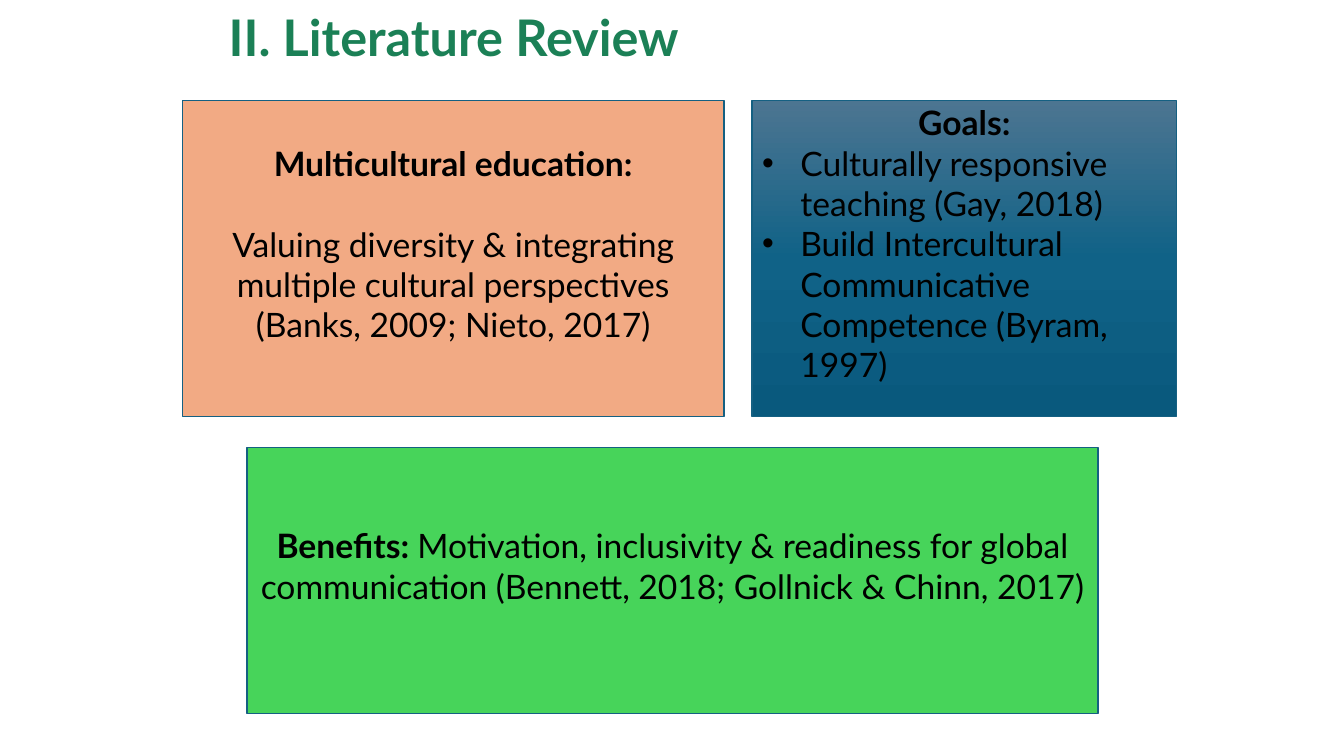
from copy import deepcopy
from lxml import etree
from pptx import Presentation
from pptx.dml.color import RGBColor
from pptx.enum.shapes import MSO_SHAPE
from pptx.enum.text import MSO_ANCHOR, PP_ALIGN
from pptx.oxml.ns import qn
from pptx.util import Inches, Pt

RECT = MSO_SHAPE.RECTANGLE
MIDDLE = MSO_ANCHOR.MIDDLE
CENTER, LEFT, JUSTIFY = PP_ALIGN.CENTER, PP_ALIGN.LEFT, PP_ALIGN.JUSTIFY
COLORS = {
    "title": "1B8056", "text": "000000", "line": "156082",
    "peach": "F2AA84", "green": "47D45A",
    "top": "4C7591", "mid": "106287", "low": "09597D",
}


def color(name):
    return RGBColor.from_string(COLORS[name])


def add_run(para, text, size, bold, name):
    run = para.add_run()
    run.text = text
    run.font.name = "Lato"
    run.font.size = Pt(size)
    run.font.bold = bold
    run.font.color.rgb = color(name)


deck = Presentation()
deck.slide_width = Inches(13.33)
deck.slide_height = Inches(7.5)
slide = deck.slides.add_slide(deck.slide_layouts[6])

title = slide.shapes.add_textbox(Inches(2.17), Inches(-0.23), Inches(9), Inches(1.25))
frame = title.text_frame
frame.word_wrap = True
frame.vertical_anchor = MIDDLE
para = frame.paragraphs[0]
para.alignment = JUSTIFY
para.line_spacing = 0.9
add_run(para, "II. Literature Review", 36, True, "title")

# Each paragraph: style, space before in points, runs of (text, bold)
boxes = [
    ((1.81, 1, 5.37, 3.13), ["peach"], [
        ("plain", 0, [("Multicultural education:", True)]),
        ("plain", 29, [("Valuing diversity & integrating multiple cultural "
                        "perspectives (Banks, 2009; Nieto, 2017)", False)]),
    ]),
    ((7.46, 1, 4.21, 3.13), ["top", "mid", "low"], [
        ("plain", 0, [("Goals:", True)]),
        ("bullet", 0, [("Culturally responsive teaching (Gay, 2018)", False)]),
        ("bullet", 0, [("Build Intercultural Communicative Competence "
                        "(Byram, 1997)", False)]),
    ]),
    ((2.45, 4.44, 8.44, 2.64), ["green"], [
        ("plain", 0, [("Benefits: ", True),
                      ("Motivation, inclusivity & readiness for global communication "
                       "(Bennett, 2018; Gollnick & Chinn, 2017)", False)]),
    ]),
]

for place, fills, paras in boxes:
    box = slide.shapes.add_shape(RECT, *[Inches(n) for n in place])
    box.shadow.inherit = False
    box.line.color.rgb = color("line")
    box.line.width = Pt(1)
    if len(fills) == 1:
        box.fill.solid()
        box.fill.fore_color.rgb = color(fills[0])
    else:
        box.fill.gradient()
        box.fill.gradient_angle = 270
        stops = box._element.xpath(".//a:gsLst")[0]
        stops.insert(1, deepcopy(stops[0]))
        for i, (stop, name) in enumerate(zip(box.fill.gradient_stops, fills)):
            stop.position = i / (len(fills) - 1)
            stop.color.rgb = color(name)

    frame = box.text_frame
    frame.word_wrap = True
    frame.vertical_anchor = MIDDLE
    frame.margin_top = 0
    frame.margin_bottom = Inches(0.3)
    for i, (style, gap, runs) in enumerate(paras):
        para = frame.add_paragraph() if i else frame.paragraphs[0]
        para.alignment = CENTER
        if gap:
            para.space_before = Pt(gap)
        if style == "bullet":
            para.alignment = LEFT
            props = para._p.get_or_add_pPr()
            props.set("marL", str(Inches(0.38)))
            props.set("indent", str(Inches(-0.38)))
            etree.SubElement(props, qn("a:buFont"), typeface="Arial")
            etree.SubElement(props, qn("a:buChar"), char="•")
        for text, bold in runs:
            add_run(para, text, 24, bold, "text")

deck.save("out.pptx")
